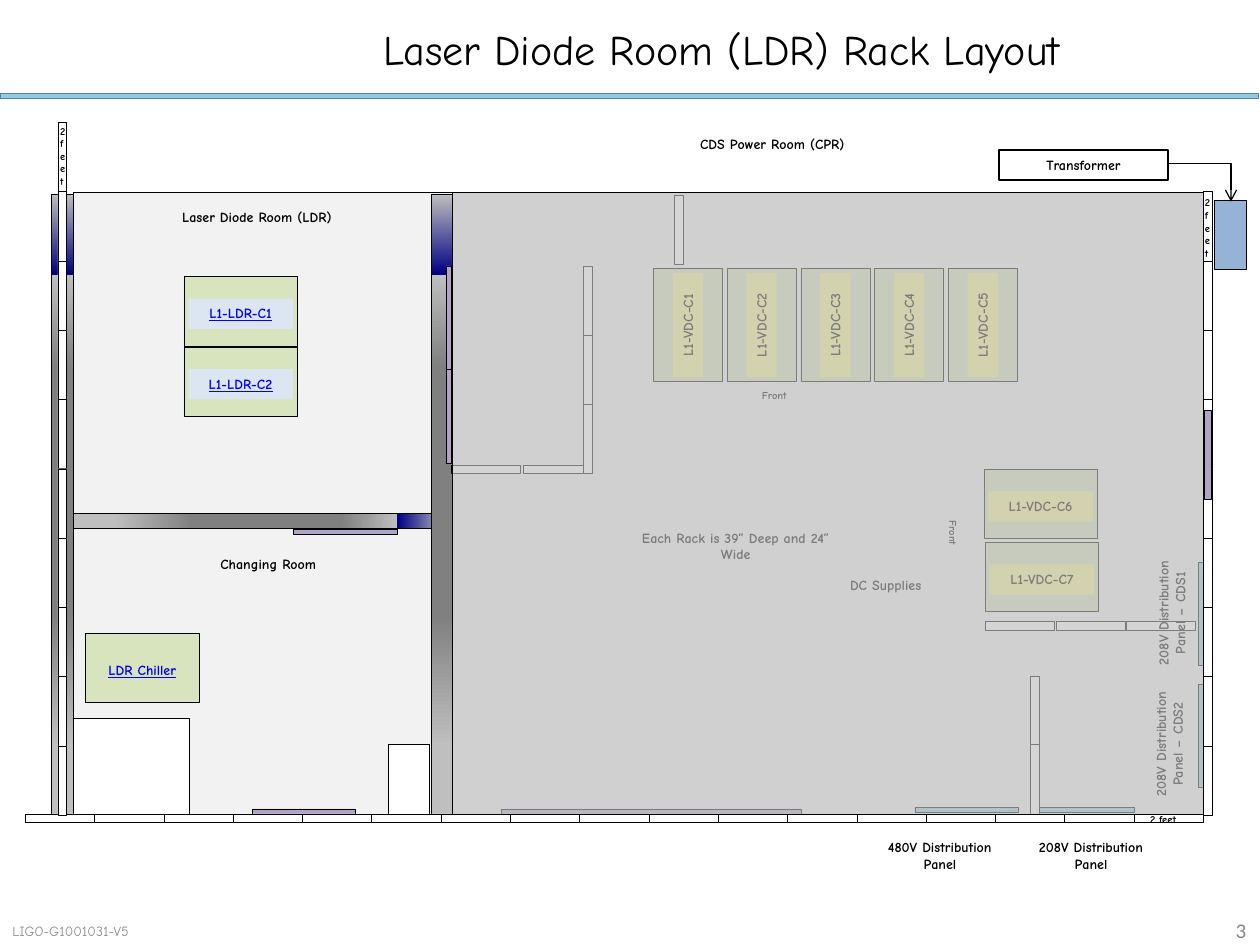
import lxml.etree
import pptx
import pptx.dml.color
import pptx.enum.shapes
import pptx.enum.text
import pptx.oxml.ns
import pptx.util

COLORS = {
    "black": "000000", "white": "FFFFFF", "room": "F2F2F2", "rack": "D7E4BD",
    "power": "F6F692", "laser": "DCE6F2", "door": "B3A2C7", "panel": "93CDDD",
    "rule_edge": "4F81BD", "shade": "BFBFBF", "transformer": "95B3D7",
    "link": "0000FF", "number": "898989", "document": "8C8C8C",
}
FORMATS = {
    "title": {"name": "Comic Neue", "size": 24},
    "label": {"name": "Comic Neue", "size": 8, "bold": True},
    "link": {"name": "Comic Neue", "size": 8, "bold": True, "underline": True},
    "small": {"name": "Comic Neue", "size": 6, "bold": True},
    "document": {"name": "Comic Neue", "size": 8},
    "number": {"name": "Calibri", "size": 12},
}
TEXT_COLORS = {"link": "link", "document": "document", "number": "number"}
ALIGN = pptx.enum.text.PP_ALIGN
ANCHOR = pptx.enum.text.MSO_ANCHOR

TILE, TILE_DEPTH = 0.55, 0.07
RACK_WIDTH, RACK_DEPTH = 0.55, 0.9
LABEL_WIDTH, LABEL_HEIGHT = 0.83, 0.24

ROOM = (0.58, 1.53, 8.97, 4.93)
POWER_ROOM = (3.59, 1.53, 5.96, 4.93)
NOOKS = [(0.58, 5.7, 0.92, 0.76), (3.08, 5.91, 0.33, 0.55)]
WALLS = [(2, 2.65, 0.12, 2.96, 90), (3.42, 1.54, 0.17, 4.92, 0), (0.41, 1.54, 0.17, 4.92, 0)]
WALL_STOPS = [(11, "BFBFBF"), (32, "808080"), (65, "808080"), (72, "808080"),
              (87, "BFBFBF"), (87, "000082"), (100, "BFBFBF"), (100, "0047FF")]
DOORS = [(3.98, 6.42, 2.38, 0.04), (2, 6.42, 0.82, 0.04), (2.33, 4.2, 0.82, 0.04),
         (3.54, 2.86, 0.04, 0.82), (3.54, 2.11, 0.04, 0.82)]
PANELS = [(7.26, 6.41, 0.82, 0.04), (8.18, 6.41, 0.82, 0.04),
          (9.51, 4.46, 0.04, 0.82), (9.51, 5.43, 0.04, 0.82)]
EAST_DOOR = (9.56, 3.26, 0.05, 0.7)
TRANSFORMER = (9.64, 1.59, 0.25, 0.55)
TRANSFORMER_LABEL = (7.93, 1.19, 1.34, 0.24)

ROWS = [(0.2, 6.46, 17, 0.55), (3.58, 3.69, 2, 0.57), (7.82, 4.93, 3, 0.56)]
COLUMNS = [(0.46, 0.97, 10, 0.55), (9.55, 1.52, 9, 0.55), (5.35, 1.55, 1, 0.55),
           (4.63, 2.11, 3, 0.55), (8.18, 5.37, 2, 0.54)]

UPRIGHT_RACKS = ["L1-VDC-C1", "L1-VDC-C2", "L1-VDC-C3", "L1-VDC-C4", "L1-VDC-C5"]
UPRIGHT_START, UPRIGHT_STEP, UPRIGHT_MIDDLE = 5.46, 0.585, 2.58
FLAT_RACKS = [
    ("L1-VDC-C6", 8.26, 4.0, "power", "label"),
    ("L1-VDC-C7", 8.27, 4.58, "power", "label"),
    ("L1-LDR-C1", 1.91, 2.47, "laser", "link"),
    ("L1-LDR-C2", 1.91, 3.03, "laser", "link"),
    ("LDR Chiller", 1.13, 5.3, None, "link"),
]

HEADINGS = [
    (["Laser Diode Room (LDR) Rack Layout"], (1.45, 0.01, 8.55, 0.75), "title", ALIGN.CENTER),
    (["LIGO-G1001031-V5"], (0, 7.29, 1.39, 0.2), "document", ALIGN.LEFT),
    (["3"], (9.26, 7.27, 0.73, 0.22), "number", ALIGN.RIGHT),
]
NOTES = [
    (["CDS Power Room (CPR)"], (4.34, 1.03, 3.58, 0.24), "label", 0),
    (["Laser Diode Room (LDR)"], (1.28, 1.61, 1.52, 0.24), "label", 0),
    (["Changing Room"], (1.63, 4.36, 1, 0.24), "label", 0),
    (["DC Supplies"], (6.61, 4.53, 0.84, 0.24), "label", 0),
    (["Front"], (5.87, 3.04, 0.55, 0.2), "small", 0),
    (["Front"], (7.29, 4.13, 0.55, 0.2), "small", 90),
    (["480V Distribution", "Panel"], (6.88, 6.61, 1.16, 0.37), "label", 0),
    (["208V Distribution", "Panel"], (8.08, 6.61, 1.16, 0.37), "label", 0),
    (["208V Distribution", "Panel – CDS1"], (8.72, 4.68, 1.16, 0.37), "label", 270),
    (["208V Distribution", "Panel – CDS2"], (8.7, 5.72, 1.16, 0.37), "label", 270),
]
RACK_NOTE = (["Each Rack is 39” Deep and 24” Wide"], (4.96, 4.15, 1.76, 0.2))
SCALES = [("2feet", (0.38, 0.94, 0.2, 0.61)), ("2feet", (9.47, 1.51, 0.19, 0.61)),
          ("2 feet", (9.03, 6.4, 0.5, 0.2))]


def length(inches):
    return pptx.util.Cm(inches * 2.54)


def color(name):
    return pptx.dml.color.RGBColor.from_string(COLORS[name])


def centred(middle_x, middle_y, width, height):
    return middle_x - width / 2, middle_y - height / 2, width, height


def add_box(page, place, fill, line="black", weight=0.25):
    box = page.shapes.add_shape(pptx.enum.shapes.MSO_SHAPE.RECTANGLE, *map(length, place))
    box.shadow.inherit = False
    if fill:
        box.fill.solid()
        box.fill.fore_color.rgb = color(fill)
    if line:
        box.line.color.rgb = color(line)
        box.line.width = pptx.util.Pt(weight)
    else:
        box.line.fill.background()
    return box


def write(box, lines, style, align=ALIGN.CENTER, wrap=False, anchor=ANCHOR.TOP):
    frame = box.text_frame
    frame.word_wrap = wrap
    frame.vertical_anchor = anchor
    for index, line in enumerate(lines):
        para = frame.add_paragraph() if index else frame.paragraphs[0]
        para.alignment = align
        span = para.add_run()
        span.text = line
        for name, value in FORMATS[style].items():
            setattr(span.font, name, pptx.util.Pt(value) if name == "size" else value)
        span.font.color.rgb = color(TEXT_COLORS.get(style, "black"))


def add_text(page, lines, place, style, rotation=0, **options):
    box = page.shapes.add_textbox(*map(length, place))
    box.rotation = rotation
    write(box, lines, style, **options)


def add_child(parent, tag, **attributes):
    return lxml.etree.SubElement(parent, pptx.oxml.ns.qn(tag), **attributes)


def add_wall(page, *place, rotation):
    wall = add_box(page, place, None)
    wall.rotation = rotation
    wall.fill.gradient()
    wall.fill.gradient_angle = 270
    properties = wall._element.spPr
    properties.find(pptx.oxml.ns.qn("a:xfrm")).set("flipV", "1")
    stops = properties.find(".//" + pptx.oxml.ns.qn("a:gsLst"))
    for stop in list(stops):
        stops.remove(stop)
    for percent, value in WALL_STOPS:
        stop = add_child(stops, "a:gs", pos=str(percent * 1000))
        add_child(stop, "a:srgbClr", val=value)


def add_rack(page, name, x, y, label_fill, style, upright=False):
    size = (RACK_WIDTH, RACK_DEPTH) if upright else (RACK_DEPTH, RACK_WIDTH)
    add_box(page, centred(x, y, *size), "rack")
    place = centred(x, y if upright else y + 0.02, LABEL_WIDTH, LABEL_HEIGHT)
    if label_fill:
        label = add_box(page, place, label_fill, line=None)
        label.rotation = 270 if upright else 0
        write(label, [name], style)
    else:
        add_text(page, [name], place, style)


def add_arrow(page):
    arrow = page.shapes.add_connector(
        pptx.enum.shapes.MSO_CONNECTOR.ELBOW, *map(length, (9.27, 1.3, 9.77, 1.6)))
    arrow.line.color.rgb = color("black")
    arrow.line.width = pptx.util.Pt(0.75)
    properties = arrow._element.spPr
    properties.find(pptx.oxml.ns.qn("a:prstGeom")).set("prst", "bentConnector2")
    add_child(arrow.line._get_or_add_ln(), "a:tailEnd", type="arrow")
    add_child(properties, "a:effectLst")


def main():
    deck = pptx.Presentation()
    deck.slide_width, deck.slide_height = length(10), length(7.5)
    page = deck.slides.add_slide(deck.slide_layouts[6])

    add_box(page, (0, 0.74, 9.99, 0.04), "panel", "rule_edge", 0.75)
    for lines, place, style, align in HEADINGS:
        add_text(page, lines, place, style, align=align, wrap=True, anchor=ANCHOR.MIDDLE)

    add_box(page, ROOM, "room")
    for index, name in enumerate(UPRIGHT_RACKS):
        add_rack(page, name, UPRIGHT_START + index * UPRIGHT_STEP, UPRIGHT_MIDDLE,
                 "power", "label", upright=True)
    for rack in FLAT_RACKS:
        add_rack(page, *rack)
    for nook in NOOKS:
        add_box(page, nook, "white")
    for *place, rotation in WALLS:
        add_wall(page, *place, rotation=rotation)
    for fill, places in (("door", DOORS), ("panel", PANELS)):
        for place in places:
            add_box(page, place, fill)
    for left, top, count, step in ROWS:
        for index in range(count):
            add_box(page, (left + index * step, top, TILE, TILE_DEPTH), "white")
    for left, top, count, step in COLUMNS:
        for index in range(count):
            add_box(page, (left, top + index * step, TILE_DEPTH, TILE), "white")
    for note in NOTES:
        add_text(page, *note)
    add_text(page, *RACK_NOTE, "label", wrap=True)

    shade = add_box(page, POWER_ROOM, "shade")
    shade_color = shade._element.spPr.find(".//" + pptx.oxml.ns.qn("a:srgbClr"))
    add_child(shade_color, "a:alpha", val="65000")
    for line, place in SCALES:
        add_text(page, [line], place, "small", align=ALIGN.LEFT, wrap=True)
    add_box(page, TRANSFORMER, "transformer")
    write(add_box(page, TRANSFORMER_LABEL, "white", weight=0.75), ["Transformer"], "label")
    add_arrow(page)
    add_box(page, EAST_DOOR, "door")
    deck.save("out.pptx")


if __name__ == "__main__":
    main()
